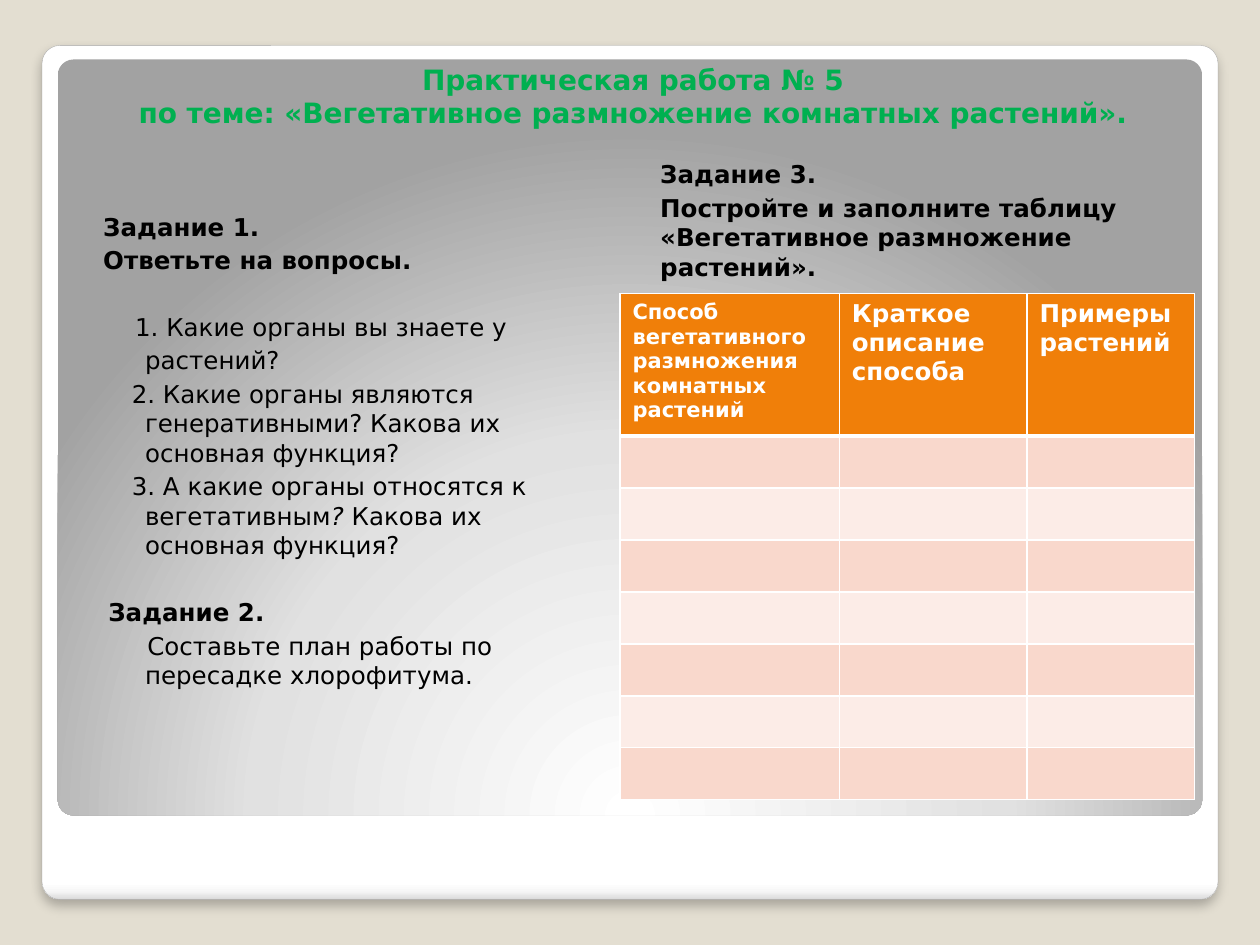
from pptx import Presentation
from pptx.dml.color import RGBColor
from pptx.enum import shapes, text
from pptx.oxml import parse_xml
from pptx.oxml.ns import nsdecls, qn
from pptx.util import Pt

FONT = "DejaVu Sans"
BEIGE = RGBColor(0xE3, 0xDE, 0xD1)
GREEN = RGBColor(0x00, 0xB0, 0x50)
BLACK = RGBColor(0x00, 0x00, 0x00)
WHITE = RGBColor(0xFF, 0xFF, 0xFF)
LIGHT = RGBColor(0xF7, 0xF7, 0xF7)
SILVER = RGBColor(0xE1, 0xE1, 0xE1)
EDGE = RGBColor(0xDA, 0xDA, 0xDA)
GRAY = RGBColor(0xA2, 0xA2, 0xA2)
OUTLINE = RGBColor(0xA4, 0xA4, 0xA4)
ORANGE = RGBColor(0xF0, 0x7F, 0x09)
BANDS = (RGBColor(0xF9, 0xD8, 0xCC), RGBColor(0xFC, 0xEC, 0xE7))

DOWNWARD = '<a:lin ang="5400000" scaled="0"/>'
FROM_BELOW = ('<a:path path="circle"><a:fillToRect l="50000" t="175000" '
              'r="50000" b="-75000"/></a:path>')


def add_panel(page, left, top, width, height, stops, direction):
    """Rounded panel with a gradient of (percent, colour) stops."""
    panel = page.shapes.add_shape(shapes.MSO_SHAPE.ROUNDED_RECTANGLE,
                                  Pt(left), Pt(top), Pt(width), Pt(height))
    panel.adjustments[0] = 0.021
    panel.shadow.inherit = False
    panel.line.fill.background()
    marks = "".join(f'<a:gs pos="{place * 1000}"><a:srgbClr val="{color}"/></a:gs>'
                    for place, color in stops)
    gradient = parse_xml(f'<a:gradFill {nsdecls("a")} rotWithShape="1">'
                         f'<a:gsLst>{marks}</a:gsLst>{direction}</a:gradFill>')
    panel._element.spPr.find(qn("a:prstGeom")).addnext(gradient)
    return panel


def add_soft_shadow(shape):
    effects = shape._element.spPr.find(qn("a:effectLst"))
    effects.append(parse_xml(
        f'<a:outerShdw {nsdecls("a")} blurRad="{Pt(6)}" dist="{Pt(4)}" dir="5400000" '
        f'algn="t" rotWithShape="0"><a:srgbClr val="{BLACK}"><a:alpha val="25000"/>'
        '</a:srgbClr></a:outerShdw>'))


def add_box(page, left, top, width, height, insets, anchor):
    box = page.shapes.add_textbox(Pt(left), Pt(top), Pt(width), Pt(height))
    frame = box.text_frame
    frame.word_wrap = True
    frame.vertical_anchor = anchor
    (frame.margin_left, frame.margin_top,
     frame.margin_right, frame.margin_bottom) = map(Pt, insets)
    return frame


def add_span(para, words, size=14, color=BLACK, bold=False, italic=False):
    span = para.add_run()
    span.text = words
    font = span.font
    font.name, font.size, font.bold, font.italic = FONT, Pt(size), bold, italic
    font.color.rgb = color


def next_para(frame, space=2.5):
    """The empty first paragraph, or a new one with space before it."""
    first = frame.paragraphs[0]
    if not first.runs:
        return first
    para = frame.add_paragraph()
    para.space_before = Pt(space)
    return para


def add_heading(page, area, insets, lines):
    frame = add_box(page, *area, insets, text.MSO_ANCHOR.MIDDLE)
    for line in lines:
        add_span(next_para(frame), line, bold=True)


def add_task(frame, spans, start, space=2.5):
    """Paragraph with a 21 pt margin whose first line begins at start."""
    para = next_para(frame, space)
    props = para._p.get_or_add_pPr()
    props.set("marL", str(Pt(21)))
    props.set("indent", str(Pt(start - 21)))
    for words, style in spans:
        add_span(para, words, **style)
    return para


def add_title(page):
    frame = add_box(page, 39.6, 20.9, 644.4, 85, (7.2, 3.6, 7.2, 32),
                    text.MSO_ANCHOR.BOTTOM)
    para = frame.paragraphs[0]
    para.alignment = text.PP_ALIGN.CENTER
    add_span(para, "Практическая работа № 5", 16, GREEN, True)
    para.add_line_break()
    add_span(para, "по теме: «Вегетативное размножение комнатных растений».",
             16, GREEN, True)


def add_tasks(page):
    frame = add_box(page, 47.5, 162, 306.7, 283.7, (14.4, 14, 7.2, 3.6),
                    text.MSO_ANCHOR.TOP)
    opening = add_task(frame, [("1. Какие органы вы знаете у растений?", {})], 15.3)
    opening.line_spacing = Pt(19)
    add_task(frame, [("2. Какие органы являются генеративными? "
                      "Какова их основная функция?", {})], 13.4)
    add_task(frame, [("3. А какие органы относятся к вегетативным", {}),
                     ("?", {"italic": True}),
                     ("\u00a0Какова их основная функция?".replace("\u00a0", " "), {})], 13.4)
    add_task(frame, [("Задание 2.", {"bold": True})], 0, space=21.5)
    add_task(frame, [("Составьте план работы по пересадке хлорофитума.", {})], 22.3)


def set_borders(cell, bottom):
    props = cell._tc.get_or_add_tcPr()
    sides = (("lnL", 1), ("lnR", 1), ("lnT", 1), ("lnB", bottom))
    for place, (side, width) in enumerate(sides):
        props.insert(place, parse_xml(
            f'<a:{side} {nsdecls("a")} w="{Pt(width)}"><a:solidFill>'
            f'<a:srgbClr val="{WHITE}"/></a:solidFill></a:{side}>'))


def add_methods_table(page):
    headings = (("Способ вегетативного размножения комнатных растений", 12),
                ("Краткое описание способа", 14),
                ("Примеры растений", 14))
    widths = (125.3, 107.3, 95.8)
    heights = [81.4] + [29.7] * 7
    table = page.shapes.add_table(len(heights), len(widths), Pt(354.3), Pt(167.8),
                                  Pt(sum(widths)), Pt(sum(heights))).table
    for column, width in zip(table.columns, widths):
        column.width = Pt(width)
    for number, height in enumerate(heights):
        row = table.rows[number]
        row.height = Pt(height)
        for cell in row.cells:
            cell.fill.solid()
            cell.fill.fore_color.rgb = BANDS[(number - 1) % 2] if number else ORANGE
            set_borders(cell, 1 if number else 3)
    for cell, (words, size) in zip(table.rows[0].cells, headings):
        add_span(cell.text_frame.paragraphs[0], words, size, WHITE, True)


def main():
    deck = Presentation()
    deck.slide_width, deck.slide_height = Pt(720), Pt(540)
    page = deck.slides.add_slide(deck.slide_layouts[6])
    page.background.fill.solid()
    page.background.fill.fore_color.rgb = BEIGE

    card = add_panel(page, 24, 26, 672, 488,
                     ((0, WHITE), (98, WHITE), (99, LIGHT), (100, EDGE)), DOWNWARD)
    card.line.color.rgb = OUTLINE
    card.line.width = Pt(0.16)
    add_soft_shadow(card)
    add_panel(page, 33, 34, 654, 432,
              ((0, WHITE), (55, SILVER), (100, GRAY)), FROM_BELOW)

    add_title(page)
    add_heading(page, (47.5, 111.6, 309.6, 51.1), (11.5, 7.2, 7.2, 3.6),
                ("Задание 1.", "Ответьте на вопросы."))
    add_heading(page, (366.5, 94.3, 309.6, 67.7), (10.8, 7.2, 7.2, 12),
                ("Задание 3.",
                 "Постройте и заполните таблицу «Вегетативное размножение растений»."))
    add_tasks(page)
    add_methods_table(page)
    deck.save("out.pptx")


if __name__ == "__main__":
    main()
